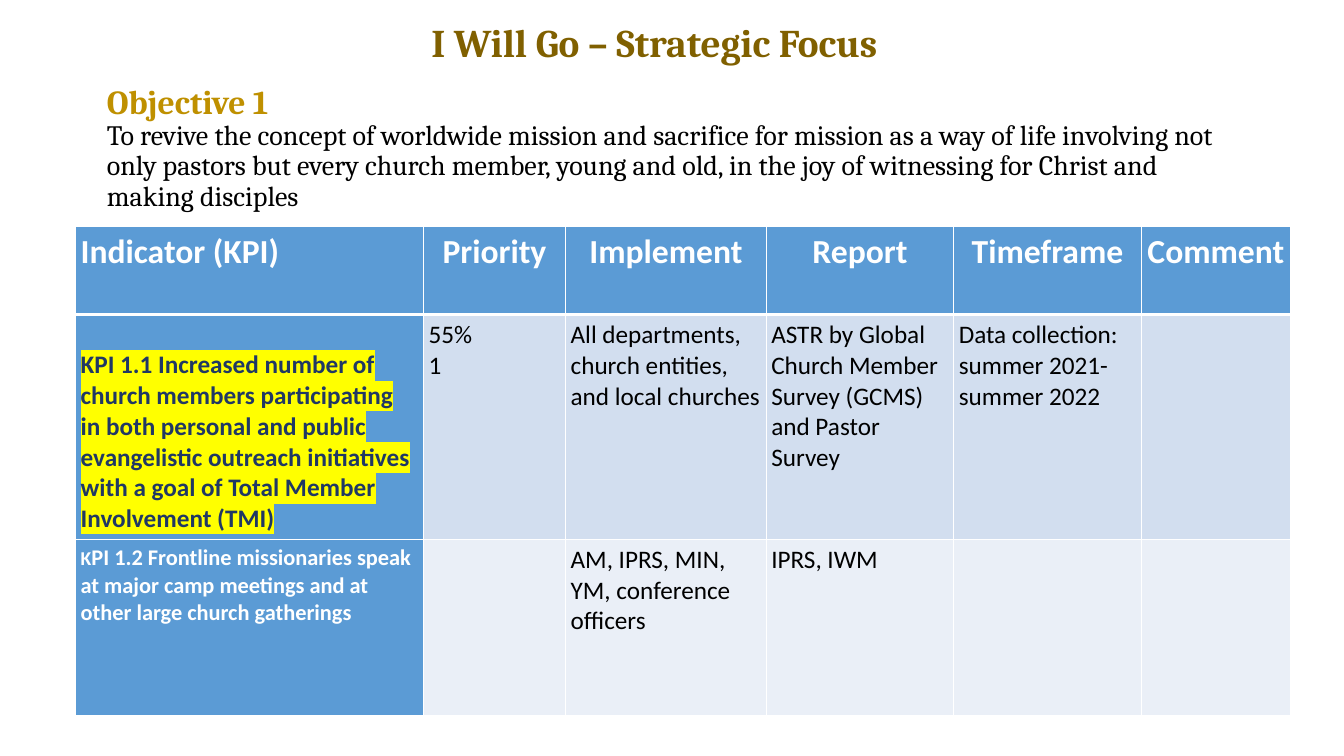
import pptx
import pptx.util
import pptx.dml.color
import pptx.enum.text
import pptx.oxml
import pptx.oxml.ns
from pptx.util import Inches

COLOURS = {
    "brown": "806000", "gold": "BF9000", "black": "000000", "white": "FFFFFF",
    "blue": "5B9BD5", "navy": "203864", "yellow": "FFFF00",
    "band_dark": "D2DEEF", "band_light": "EAEFF7",
}
ALIGN = pptx.enum.text.PP_ALIGN
ANCHOR = pptx.enum.text.MSO_ANCHOR
NO_FIT = pptx.enum.text.MSO_AUTO_SIZE.NONE

HEADING = "I Will Go – Strategic Focus"
OBJECTIVE = "Objective 1"
OBJECTIVE_TEXT = (
    "To revive the concept of worldwide mission and sacrifice for mission as a way of life "
    "involving not only pastors but every church member, young and old, in the joy of "
    "witnessing for Christ and making disciples"
)
HEADERS = ["Indicator (KPI)", "Priority", "Implement", "Report", "Timeframe", "Comment"]
KPI_ROWS = [
    ["KPI 1.1 Increased number of church members participating in both personal and public "
     "evangelistic outreach initiatives with a goal of Total Member Involvement (TMI)",
     "55%\n1",
     "All departments, church entities, and local churches",
     "ASTR by Global Church Member Survey (GCMS) and Pastor Survey",
     "Data collection: summer 2021-summer 2022",
     ""],
    ["KPI 1.2 Frontline missionaries speak at major camp meetings and at other large church "
     "gatherings",
     "", "AM, IPRS, MIN, YM, conference officers", "IPRS, IWM", "", ""],
]
COLUMN_WIDTHS = [3.45, 1.41, 1.99, 1.86, 1.86, 1.48]
ROW_HEIGHTS = [0.87, 2.23, 1.75]
CELL_MARGIN = 0.05
FIRST_KPI_TOP = 0.35

FORMATS = {
    "heading": {"name": "Cambria", "size": 28, "bold": True, "colour": "brown"},
    "objective": {"name": "Cambria", "size": 24, "bold": True, "colour": "gold"},
    "objective_text": {"name": "Cambria", "size": 20, "bold": False, "colour": "black"},
    "header": {"name": "Calibri", "size": 24, "bold": True, "colour": "white"},
    "body": {"name": "Calibri", "size": 18, "bold": False, "colour": "black"},
    "kpi_marked": {"name": "Calibri", "size": 18, "bold": True, "colour": "navy"},
    "kpi": {"name": "Calibri", "size": 16, "bold": True, "colour": "white"},
    "kpi_initial": {"name": "Calibri", "size": 14, "bold": True, "colour": "white"},
}


def rgb(colour):
    return pptx.dml.color.RGBColor.from_string(COLOURS[colour])


def add_span(para, text, style):
    span = para.add_run()
    span.text = text
    for key, value in FORMATS[style].items():
        if key == "colour":
            span.font.color.rgb = rgb(value)
        else:
            setattr(span.font, key, pptx.util.Pt(value) if key == "size" else value)
    return span


def highlight(span, colour):
    mark = pptx.oxml.parse_xml(
        f'<a:highlight {pptx.oxml.ns.nsdecls("a")}><a:srgbClr val="{COLOURS[colour]}"/></a:highlight>')
    span.font.fill._xPr.find(pptx.oxml.ns.qn("a:solidFill")).addnext(mark)


def set_borders(cell, widths):
    """Draw white borders; widths maps the sides L, R, T, B to points."""
    properties = cell._tc.get_or_add_tcPr()
    for position, (side, width) in enumerate(widths.items()):
        properties.insert(position, pptx.oxml.parse_xml(
            f'<a:ln{side} {pptx.oxml.ns.nsdecls("a")} w="{pptx.util.Pt(width)}"><a:solidFill>'
            f'<a:srgbClr val="{COLOURS["white"]}"/></a:solidFill></a:ln{side}>'))


def add_heading(page):
    box = page.shapes.add_textbox(Inches(2.45), Inches(0.13), Inches(8.08), Inches(0.57))
    box.text_frame.word_wrap = True
    para = box.text_frame.paragraphs[0]
    para.alignment = ALIGN.CENTER
    add_span(para, HEADING, "heading")


def add_objective(page):
    title = page.shapes.title
    title.left, title.top, title.width, title.height = map(Inches, (0.96, 0.7, 11.45, 1.55))
    frame = title.text_frame
    frame.auto_size = NO_FIT
    frame.word_wrap = True
    frame.vertical_anchor = ANCHOR.MIDDLE
    for para, text, style in [
        (frame.paragraphs[0], OBJECTIVE, "objective"),
        (frame.add_paragraph(), OBJECTIVE_TEXT, "objective_text"),
    ]:
        para.alignment = ALIGN.LEFT
        para.line_spacing = 0.9
        add_span(para, text, style)


def fill_cell(cell, text, row, column):
    for side in ("left", "right", "top", "bottom"):
        setattr(cell, f"margin_{side}", Inches(CELL_MARGIN))
    cell.fill.solid()
    is_blue = row == 0 or column == 0
    cell.fill.fore_color.rgb = rgb("blue" if is_blue else ("band_dark", "band_light")[row - 1])
    set_borders(cell, {"L": 1, "R": 1, "T": 3 if row == 1 else 1, "B": 3 if row == 0 else 1})

    frame = cell.text_frame
    if row and column == 0:
        para = frame.paragraphs[0]
        if row == 1:
            cell.margin_top = Inches(FIRST_KPI_TOP)
            highlight(add_span(para, text, "kpi_marked"), "yellow")
        else:
            add_span(para, text[0], "kpi_initial")
            add_span(para, text[1:], "kpi")
        return
    for index, line in enumerate(text.split("\n") if text else []):
        para = frame.add_paragraph() if index else frame.paragraphs[0]
        if row == 0 and column:
            para.alignment = ALIGN.CENTER
        add_span(para, line, "body" if row else "header")


def add_kpi_table(page):
    table = page.shapes.add_table(
        len(ROW_HEIGHTS), len(COLUMN_WIDTHS), Inches(0.75), Inches(2.25),
        Inches(sum(COLUMN_WIDTHS)), Inches(sum(ROW_HEIGHTS))).table
    for column, width in zip(table.columns, COLUMN_WIDTHS):
        column.width = Inches(width)
    for row, height in zip(table.rows, ROW_HEIGHTS):
        row.height = Inches(height)
    for row, texts in enumerate([HEADERS] + KPI_ROWS):
        for column, text in enumerate(texts):
            fill_cell(table.cell(row, column), text, row, column)


def main():
    deck = pptx.Presentation()
    deck.slide_width, deck.slide_height = Inches(13.33), Inches(7.5)
    page = deck.slides.add_slide(deck.slide_layouts[5])
    add_objective(page)
    add_kpi_table(page)
    add_heading(page)
    deck.save("out.pptx")


if __name__ == "__main__":
    main()
